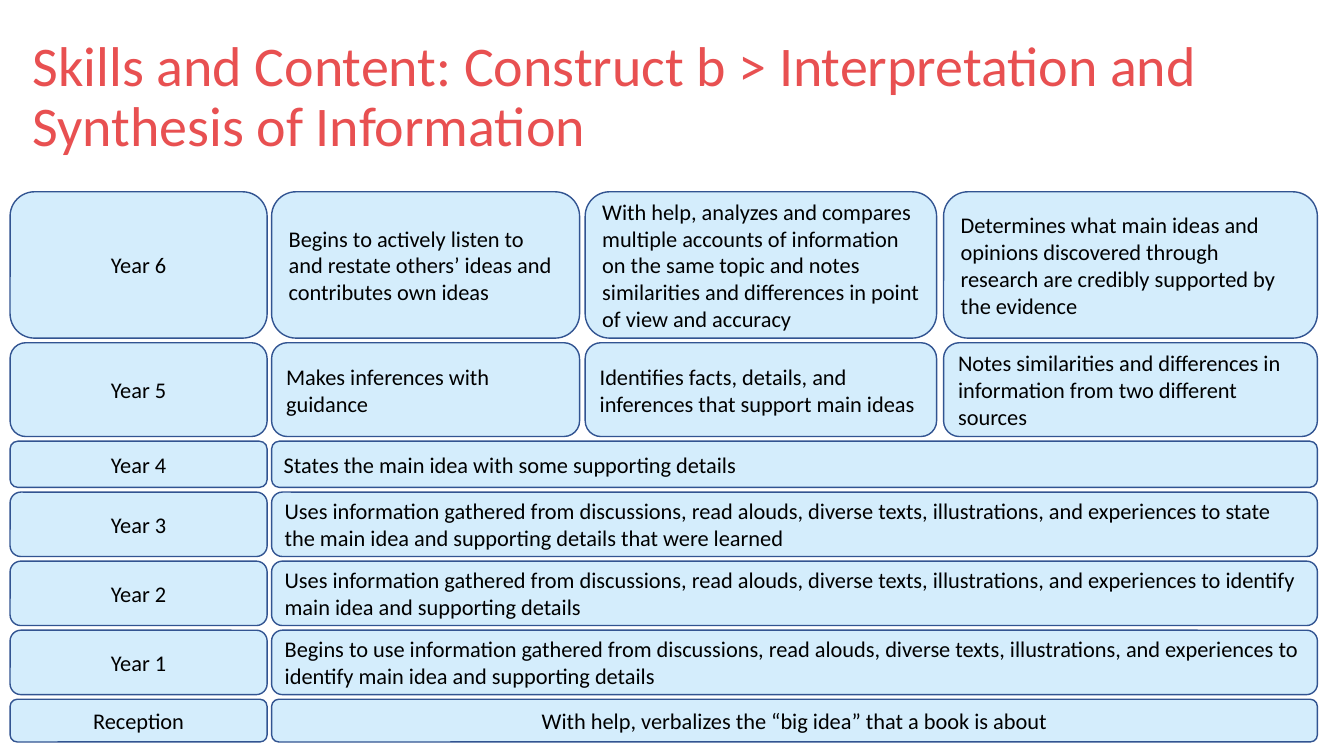
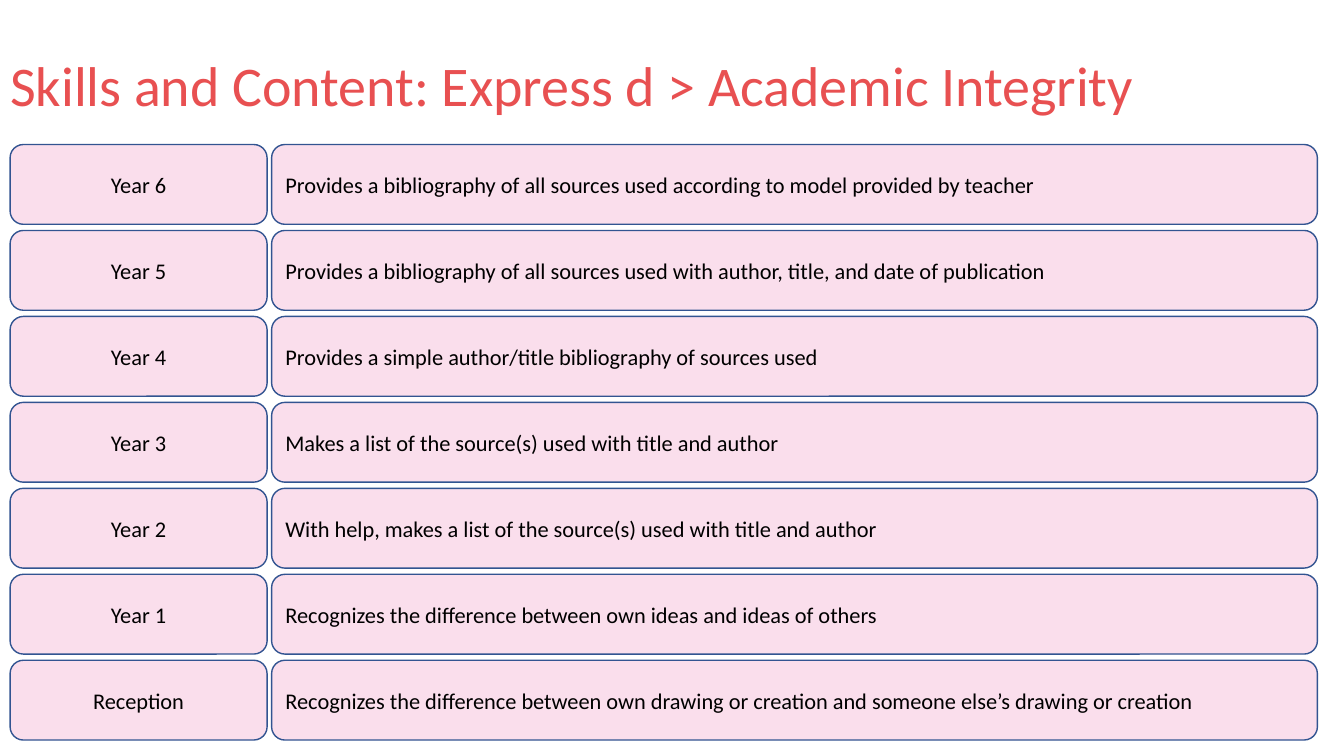
from pptx import Presentation as Deck
from pptx.dml.color import RGBColor as RGB
from pptx.enum.shapes import MSO_SHAPE as Shape
from pptx.enum.text import MSO_ANCHOR as Anchor, MSO_AUTO_SIZE as Fit, PP_ALIGN as Align
from pptx.util import Pt

# Shared look, lengths in points
HUES = {"title": "E85051", "line": "325491", "text": "000000", "blue": "D4EDFC", "pink": "FADEEC"}
FONT = "Calibri"
LEFT, TAG_W = 7.2, 183.6
COLS = [(194, 220), (418, 251), (674, 267)]
FULL = [(194, 747)]
TITLE_LAYOUT = 5

# Rows: label, height, texts
BLUE_ROWS = [
    ("Year 6", 104.5, [
        "Begins to actively listen to and restate others’ ideas and contributes own ideas",
        "With help, analyzes and compares multiple accounts of information on the same topic "
        "and notes similarities and differences in point of view and accuracy",
        "Determines what main ideas and opinions discovered through research are credibly "
        "supported by the evidence"]),
    ("Year 5", 67, [
        "Makes inferences with guidance",
        "Identifies facts, details, and inferences that support main ideas",
        "Notes similarities and differences in information from two different sources"]),
    ("Year 4", 33, ["States the main idea with some supporting details"]),
    ("Year 3", 46, [
        "Uses information gathered from discussions, read alouds, diverse texts, illustrations, "
        "and experiences to state the main idea and supporting details that were learned"]),
    ("Year 2", 46, [
        "Uses information gathered from discussions, read alouds, diverse texts, illustrations, "
        "and experiences to identify main idea and supporting details"]),
    ("Year 1", 46, [
        "Begins to use information gathered from discussions, read alouds, diverse texts, "
        "illustrations, and experiences to identify main idea and supporting details"]),
    ("Reception", 30.5, ["With help, verbalizes the “big idea” that a book is about"]),
]
PINK_ROWS = [(label, 57, [text]) for label, text in [
    ("Year 6", "Provides a bibliography of all sources used according to model provided by teacher"),
    ("Year 5", "Provides a bibliography of all sources used with author, title, and date of publication"),
    ("Year 4", "Provides a simple author/title bibliography of sources used"),
    ("Year 3", "Makes a list of the source(s) used with title and author"),
    ("Year 2", "With help, makes a list of the source(s) used with title and author"),
    ("Year 1", "Recognizes the difference between own ideas and ideas of others"),
    ("Reception", "Recognizes the difference between own drawing or creation and someone else’s "
                  "drawing or creation"),
]]


def hue(name):
    return RGB.from_string(HUES[name])


def apply(item, values):
    for key, value in values.items():
        setattr(item, key, value)


def write(shape, text, size, tone, align, space=None):
    frame = shape.text_frame
    frame.text = text
    apply(frame, {"word_wrap": True, "auto_size": Fit.NONE, "vertical_anchor": Anchor.MIDDLE})
    para = frame.paragraphs[0]
    apply(para, {"alignment": align, "line_spacing": space})
    apply(para.font, {"name": FONT, "size": Pt(size)})
    para.font.color.rgb = hue(tone)


def add_page(deck, text, box):
    page = deck.slides.add_slide(deck.slide_layouts[TITLE_LAYOUT])
    title = page.shapes.title
    apply(title, dict(zip(("left", "top", "width", "height"), map(Pt, box))))
    write(title, text, 40, "title", Align.LEFT, 0.9)
    return page


def add_card(page, box, text, fill, align):
    card = page.shapes.add_shape(Shape.ROUNDED_RECTANGLE, *map(Pt, box))
    card.shadow.inherit = False
    card.fill.solid()
    card.fill.fore_color.rgb = hue(fill)
    card.line.color.rgb = hue("line")
    card.line.width = Pt(1)
    write(card, text, 16, "text", align)


def add_rows(page, rows, top, gap, fill, last=Align.LEFT):
    for label, high, texts in rows:
        add_card(page, (LEFT, top, TAG_W, high), label, fill, Align.CENTER)
        align = last if label == "Reception" else Align.LEFT
        spans = COLS if len(texts) > 1 else FULL
        for (left, wide), text in zip(spans, texts):
            add_card(page, (left, top, wide, high), text, fill, align)
        top += high + gap


def main():
    deck = Deck()
    apply(deck, {"slide_width": Pt(960), "slide_height": Pt(540)})

    # Interpretation skills
    page = add_page(deck, "Skills and Content: Construct b > Interpretation and Synthesis of Information",
                    (16, 18, 908.5, 104.4))
    add_rows(page, BLUE_ROWS, 137, 3.33, "blue", Align.CENTER)

    # Academic integrity
    page = add_page(deck, "Skills and Content: Express d > Academic Integrity", (0, 11, 960, 104.4))
    add_rows(page, PINK_ROWS, 103.2, 4.4, "pink")

    deck.save("out.pptx")


if __name__ == "__main__":
    main()
